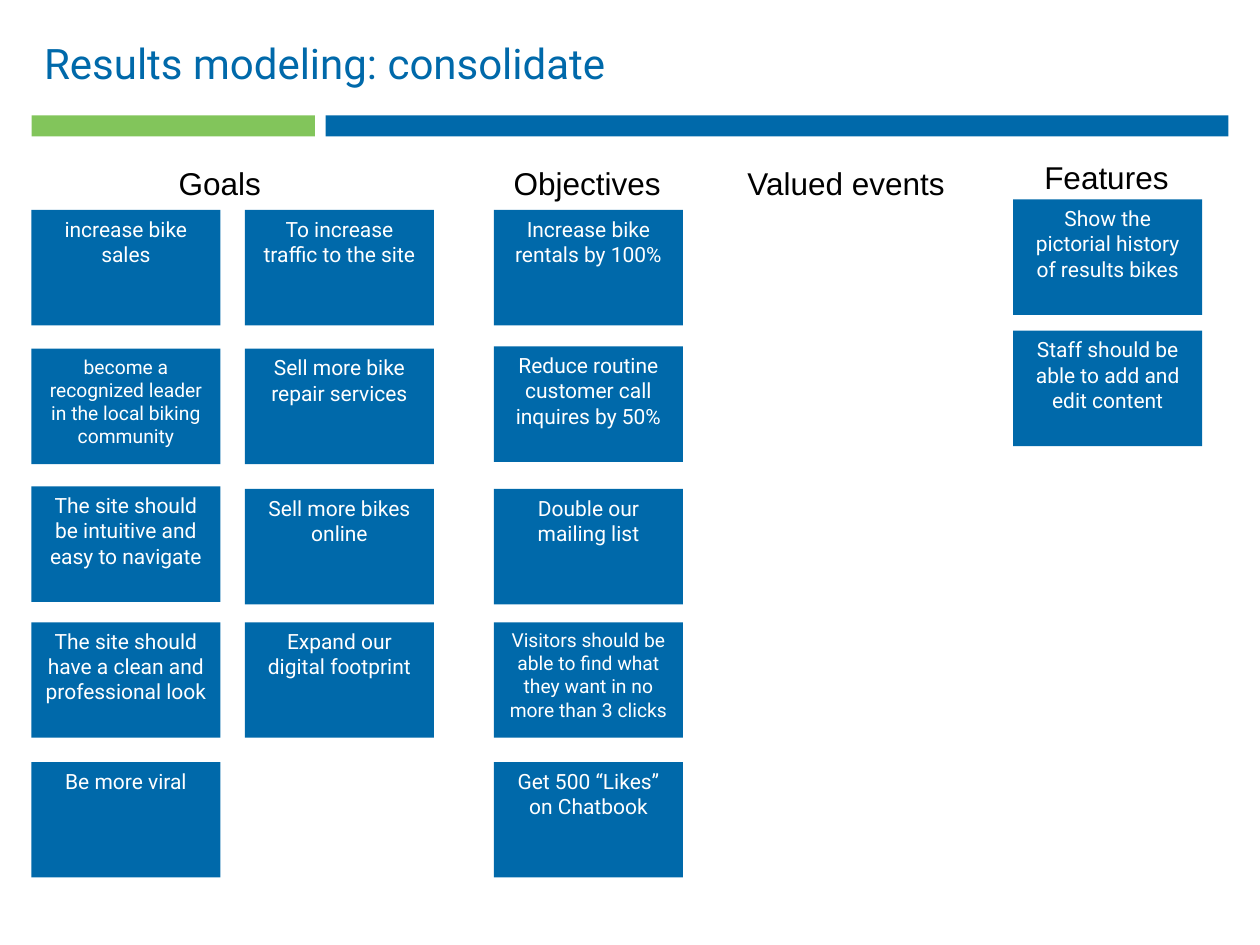
from pptx import Presentation
from pptx.dml.color import RGBColor
from pptx.enum.shapes import MSO_SHAPE
from pptx.enum.text import MSO_ANCHOR, PP_ALIGN
from pptx.util import Pt

# Content: cards are (top, text) and may end with a smaller type size
TITLE = "Results modeling: consolidate"
HEADINGS = [  # text, left, top, width
    ("Goals", 95, 90, 62),
    ("Objectives", 286.5, 90, 99.5),
    ("Valued events", 420, 90, 128),
    ("Features", 589.7, 87, 86.5),
]
COLUMNS = [  # left, cards
    (18, [
        (120, "increase bike sales"),
        (199.3, "become a recognized leader in the local biking community", 11),
        (278, "The site should be intuitive and easy to navigate"),
        (355.6, "The site should have a clean and professional look"),
        (435.5, "Be more viral"),
    ]),
    (140, [
        (120, "To increase traffic to the site"),
        (199.3, "Sell more bike repair services"),
        (279.4, "Sell more bikes online"),
        (355.6, "Expand our digital footprint"),
    ]),
    (282.3, [
        (120, "Increase bike rentals by 100%"),
        (198, "Reduce routine customer call inquires by 50%"),
        (279.4, "Double our mailing list"),
        (355.6, "Visitors should be able to find what they want "
                "in no more than 3 clicks", 11),
        (435.5, "Get 500 “Likes” on Chatbook"),
    ]),
    (579, [
        (114, "Show the pictorial history of results bikes"),
        (189, "Staff should be able to add and edit content"),
    ]),
]

THEME = dict(
    blue=RGBColor(0x00, 0x69, 0xAA), green=RGBColor(0x82, 0xC5, 0x5B),
    white=RGBColor(255, 255, 255), black=RGBColor(0, 0, 0),
    font="Roboto", heading_font="Arial",
    title_size=24, heading_size=18, card_size=12,
)
CARD_W, CARD_H = 108, 66


def set_text(sp, text, font, size, color, align=PP_ALIGN.LEFT, wrap=True):
    tf = sp.text_frame
    tf.text = text
    tf.word_wrap = wrap
    tf.vertical_anchor = MSO_ANCHOR.TOP
    p = tf.paragraphs[0]
    p.alignment = align
    r = p.runs[0]
    r.font.name, r.font.size, r.font.color.rgb = font, Pt(size), color


def add_rect(slide, left, top, width, height, color):
    sp = slide.shapes.add_shape(MSO_SHAPE.RECTANGLE, Pt(left), Pt(top),
                                Pt(width), Pt(height))
    sp.shadow.inherit = False
    sp.fill.solid()
    sp.fill.fore_color.rgb = color
    sp.line.fill.background()
    return sp


prs = Presentation()
prs.slide_width, prs.slide_height = Pt(720), Pt(540)
slide = prs.slides.add_slide(prs.slide_layouts[5])

# Title and the two-colour rule below it
title = slide.shapes.title
title.left, title.top, title.width, title.height = Pt(18), Pt(18), Pt(648), Pt(36)
set_text(title, TITLE, THEME["font"], THEME["title_size"], THEME["blue"])
add_rect(slide, 186, 66, 516, 12, THEME["blue"])
add_rect(slide, 18, 66, 162, 12, THEME["green"])

# Cards
for left, cards in COLUMNS:
    for top, text, *size in cards:
        sp = add_rect(slide, left, top, CARD_W, CARD_H, THEME["blue"])
        set_text(sp, text, THEME["font"], size[0] if size else THEME["card_size"],
                 THEME["white"], PP_ALIGN.CENTER)

# Column headings
for text, left, top, width in HEADINGS:
    sp = slide.shapes.add_textbox(Pt(left), Pt(top), Pt(width), Pt(29))
    set_text(sp, text, THEME["heading_font"], THEME["heading_size"],
             THEME["black"], wrap=False)

prs.save("out.pptx")
